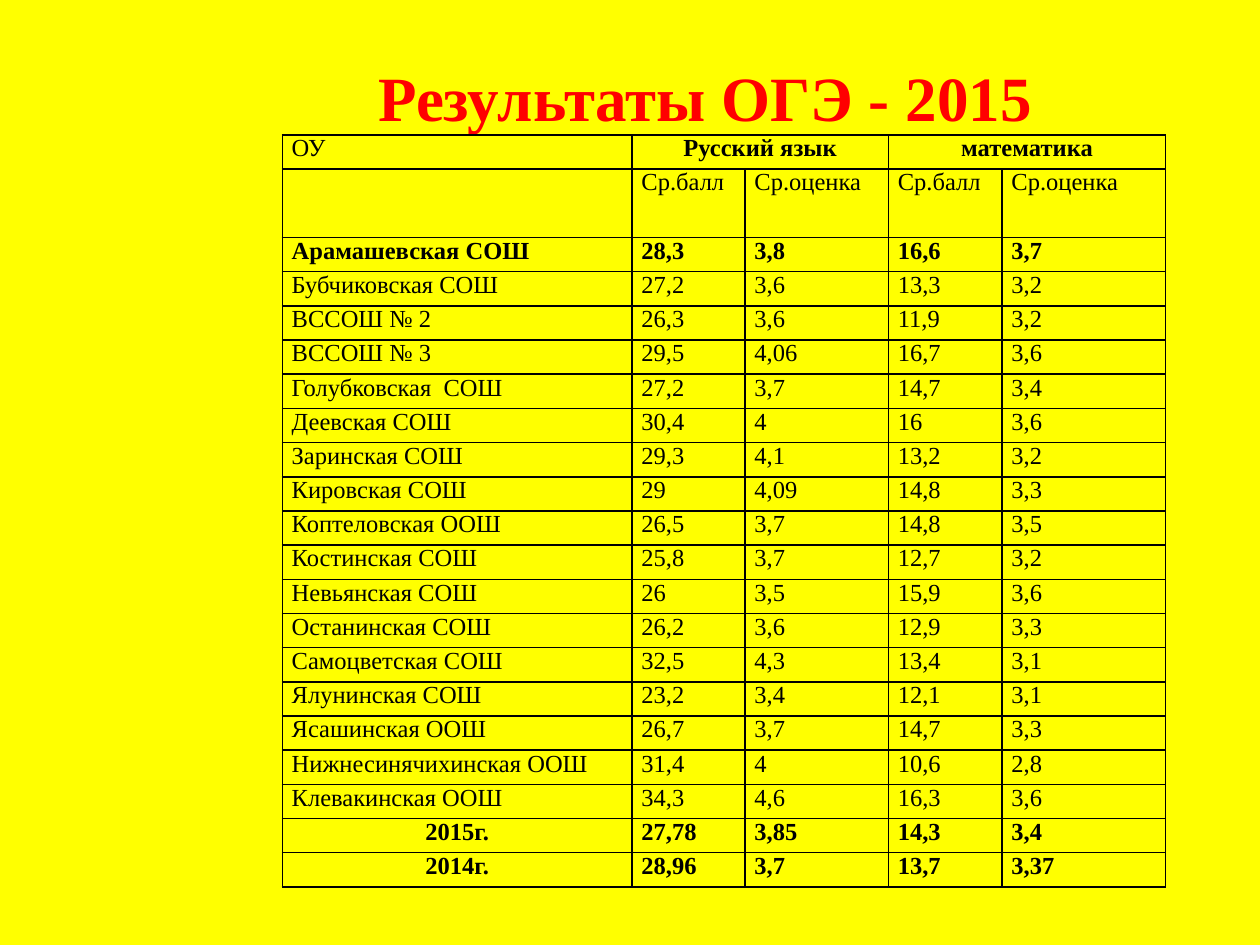
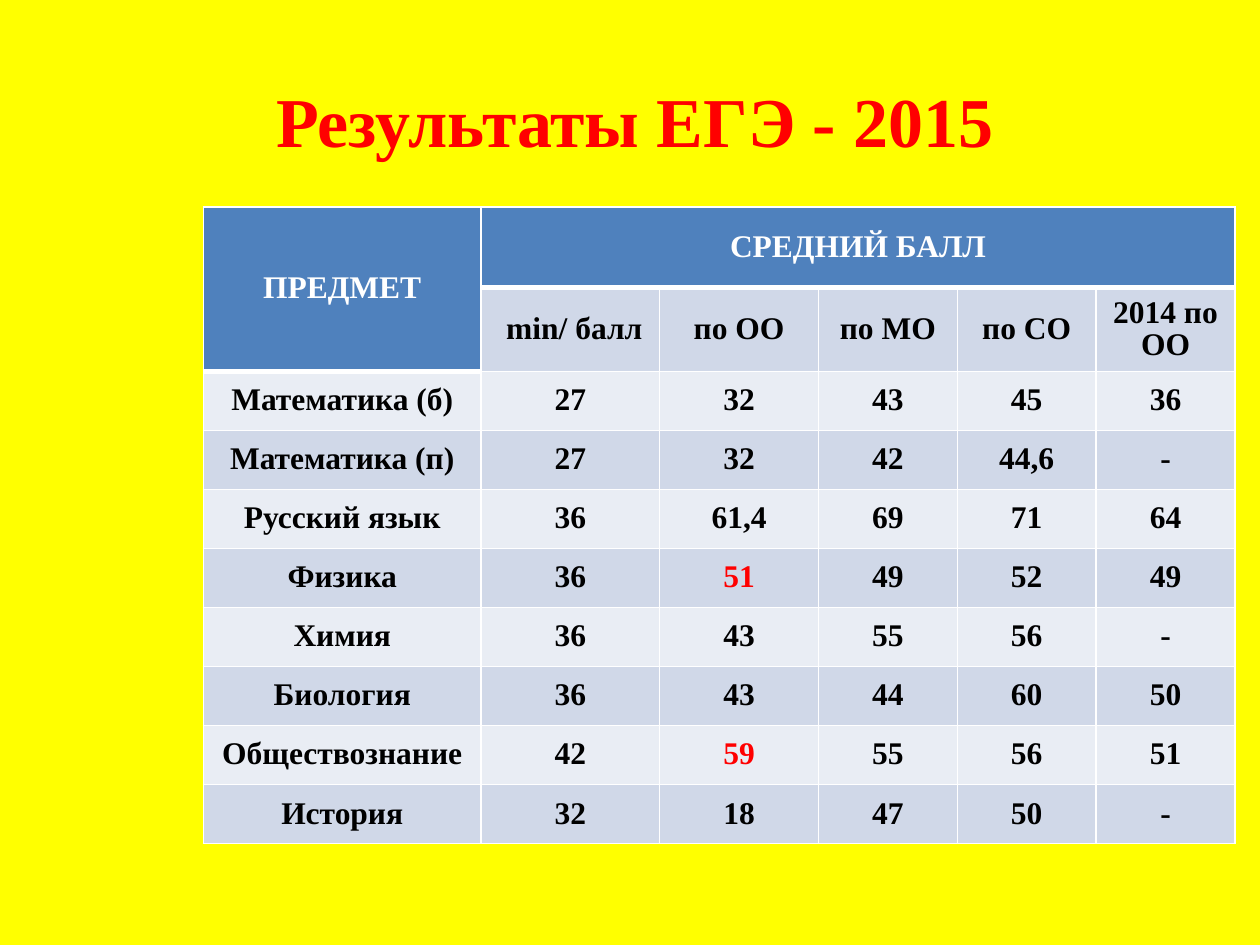
from lxml import etree
from pptx import Presentation
from pptx import util as u
from pptx.dml.color import RGBColor
from pptx.enum import text
from pptx.oxml.ns import qn

YELLOW, RED, BLACK, WHITE = "FFFF00", "FF0000", "000000", "FFFFFF"
HEADER_BLUE, DARK_BAND, LIGHT_BAND = "4F81BD", "D0D8E8", "E9EDF4"

OGE_HEADER = [
    ("ОУ", "Русский язык", "", "математика", ""),
    ("", "Ср.балл", "Ср.оценка", "Ср.балл", "Ср.оценка"),
]
OGE_SCHOOLS = [
    ("Арамашевская СОШ", "28,3", "3,8", "16,6", "3,7"),
    ("Бубчиковская СОШ", "27,2", "3,6", "13,3", "3,2"),
    ("ВССОШ № 2", "26,3", "3,6", "11,9", "3,2"),
    ("ВССОШ № 3", "29,5", "4,06", "16,7", "3,6"),
    ("Голубковская  СОШ", "27,2", "3,7", "14,7", "3,4"),
    ("Деевская СОШ", "30,4", "4", "16", "3,6"),
    ("Заринская СОШ", "29,3", "4,1", "13,2", "3,2"),
    ("Кировская СОШ", "29", "4,09", "14,8", "3,3"),
    ("Коптеловская ООШ", "26,5", "3,7", "14,8", "3,5"),
    ("Костинская СОШ", "25,8", "3,7", "12,7", "3,2"),
    ("Невьянская СОШ", "26", "3,5", "15,9", "3,6"),
    ("Останинская СОШ", "26,2", "3,6", "12,9", "3,3"),
    ("Самоцветская СОШ", "32,5", "4,3", "13,4", "3,1"),
    ("Ялунинская СОШ", "23,2", "3,4", "12,1", "3,1"),
    ("Ясашинская ООШ", "26,7", "3,7", "14,7", "3,3"),
    ("Нижнесинячихинская ООШ", "31,4", "4", "10,6", "2,8"),
    ("Клевакинская ООШ", "34,3", "4,6", "16,3", "3,6"),
]
OGE_YEARS = [
    ("2015г.", "27,78", "3,85", "14,3", "3,4"),
    ("2014г.", "28,96", "3,7", "13,7", "3,37"),
]
EGE_HEADER = [
    ("ПРЕДМЕТ", "СРЕДНИЙ БАЛЛ", "", "", "", ""),
    ("", " min/ балл", "по ОО", "по МО", "по СО", "2014 по ОО"),
]
EGE_SUBJECTS = [
    ("Математика (б)", "27", "32", "43", "45", "36"),
    ("Математика (п)", "27", "32", "42", "44,6", "-"),
    ("Русский язык", "36", "61,4", "69", "71", "64"),
    ("Физика", "36", "51", "49", "52", "49"),
    ("Химия", "36", "43", "55", "56", "-"),
    ("Биология", "36", "43", "44", "60", "50"),
    ("Обществознание", "42", "59", "55", "56", "51"),
    ("История", "32", "18", "47", "50", "-"),
]
EGE_BEST = {("Физика", 2), ("Обществознание", 2)}


def rgb(code):
    return RGBColor.from_string(code)


class Deck:
    font_name = "Times New Roman"

    def __init__(self):
        self.presentation = Presentation()
        self.presentation.slide_width = u.Cm(25.4)
        self.presentation.slide_height = u.Cm(19.05)
        self.slide = None

    def new_slide(self):
        self.slide = self.presentation.slides.add_slide(self.presentation.slide_layouts[6])
        background = self.slide.background.fill
        background.solid()
        background.fore_color.rgb = rgb(YELLOW)

    def set_text(self, paragraph, words, size, color, bold, centred):
        paragraph.text = words
        paragraph.alignment = text.PP_ALIGN.CENTER if centred else text.PP_ALIGN.LEFT
        font = paragraph.font
        font.name, font.size, font.bold = self.font_name, u.Pt(size), bold
        font.color.rgb = rgb(color)

    def title(self, words, left, top, width, height, size):
        box = self.slide.shapes.add_textbox(*map(u.Cm, (left, top, width, height)))
        frame = box.text_frame
        frame.word_wrap = True
        frame.vertical_anchor = text.MSO_ANCHOR.MIDDLE
        self.set_text(frame.paragraphs[0], words, size, RED, True, True)

    def table(self, left, top, widths, heights, border_color):
        """Add an unstyled table with thin borders round every cell."""
        frame = self.slide.shapes.add_table(
            len(heights), len(widths), u.Cm(left), u.Cm(top),
            u.Cm(sum(widths)), u.Cm(sum(heights)))
        table = frame.table
        table.first_row = table.horz_banding = False
        for column, width in zip(table.columns, widths):
            column.width = u.Cm(width)
        for row, height in zip(table.rows, heights):
            row.height = u.Cm(height)
        for cell in table.iter_cells():
            for side in "LRTB":
                self.border(cell, side, 1, border_color)
            cell.fill.background()
        return table

    def border(self, cell, side, width, color):
        properties = cell._tc.get_or_add_tcPr()
        line = properties.find(qn(f"a:ln{side}"))
        if line is None:
            line = etree.SubElement(properties, qn(f"a:ln{side}"))
            fill = etree.SubElement(line, qn("a:solidFill"))
            etree.SubElement(fill, qn("a:srgbClr"), val=color)
        line.set("w", str(u.Pt(width)))

    def thick_rule(self, table, row, column, color):
        """Thicken the border below a cell, on both sides of the shared edge."""
        self.border(table.cell(row, column), "B", 3, color)
        self.border(table.cell(row + 1, column), "T", 3, color)


def oge_slide(deck):
    deck.new_slide()
    deck.title("Результаты ОГЭ - 2015", 4.3, 0.76, 19.83, 2.36, 36)
    rows = OGE_HEADER + OGE_SCHOOLS + OGE_YEARS
    heights = [0.69, 1.38] + [0.69] * (len(rows) - 2)
    table = deck.table(5.69, 2.72, [7.05, 2.28, 2.89, 2.29, 3.3], heights, BLACK)
    for column in (1, 3):
        table.cell(0, column).merge(table.cell(0, column + 1))
    for r, row in enumerate(rows):
        is_year = row in OGE_YEARS
        for c, words in enumerate(row):
            cell = table.cell(r, c)
            cell.margin_left = cell.margin_right = u.Cm(0.19)
            cell.margin_top = cell.margin_bottom = 0
            if not words:
                continue
            is_exam = r == 0 and c > 0
            bold = is_exam or is_year or row == OGE_SCHOOLS[0]
            centred = is_exam or (is_year and c == 0)
            deck.set_text(cell.text_frame.paragraphs[0], words, 14, BLACK, bold, centred)


def ege_slide(deck):
    deck.new_slide()
    deck.title("Результаты ЕГЭ - 2015", 4.3, 1.32, 17, 2.16, 40)
    rows = EGE_HEADER + EGE_SUBJECTS
    heights = [1.63] * 2 + [1.19] * len(EGE_SUBJECTS)
    table = deck.table(4.1, 4.17, [5.6, 3.6, 3.2, 2.8, 2.8, 2.8], heights, WHITE)
    table.cell(0, 0).merge(table.cell(1, 0))
    table.cell(0, 1).merge(table.cell(0, 5))
    deck.thick_rule(table, 1, 0, WHITE)
    for column in range(1, 6):
        deck.thick_rule(table, 0, column, WHITE)
    for r, row in enumerate(rows):
        for c, words in enumerate(row):
            cell = table.cell(r, c)
            is_header = r == 0 or (r == 1 and c == 0)
            band = DARK_BAND if r % 2 else LIGHT_BAND
            cell.fill.solid()
            cell.fill.fore_color.rgb = rgb(HEADER_BLUE if is_header else band)
            cell.vertical_anchor = text.MSO_ANCHOR.MIDDLE
            if not words:
                continue
            color = WHITE if is_header else RED if (row[0], c) in EGE_BEST else BLACK
            paragraph = cell.text_frame.paragraphs[0]
            paragraph.line_spacing = 0.94
            deck.set_text(paragraph, words, 18, color, True, True)


def main():
    deck = Deck()
    oge_slide(deck)
    ege_slide(deck)
    deck.presentation.save("out.pptx")


if __name__ == "__main__":
    main()
